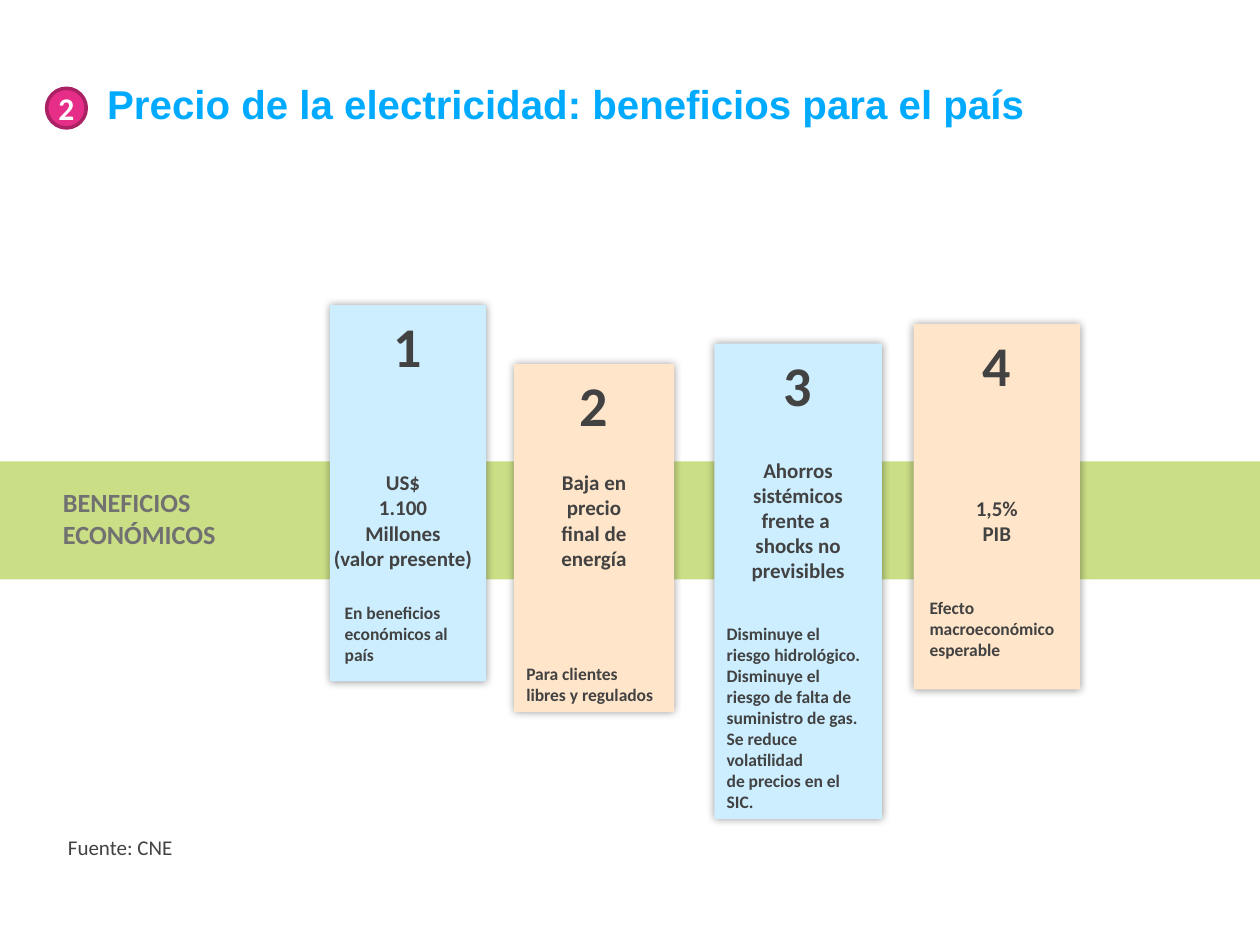
from dataclasses import dataclass

from lxml.etree import SubElement
from pptx import Presentation
from pptx.dml.color import RGBColor
from pptx.enum.shapes import MSO_SHAPE
from pptx.enum.text import MSO_ANCHOR, PP_ALIGN
from pptx.oxml.ns import qn
from pptx.util import Cm, Pt

BLUE, PEACH, GREEN = "CCEEFF", "FFE5C9", "96BE0F"
PINK, DARK_PINK, TITLE_BLUE = "E62D87", "AA2164", "00AAFF"
DARK, GREY, WHITE = "424242", "717171", "FFFFFF"
BAND_TOP, BAND_HEIGHT = 9.3, 2.38
BAND_MIDDLE = BAND_TOP + BAND_HEIGHT / 2
HEADLINE_LINE = 0.51


@dataclass
class Benefit:
    left: float
    top: float
    width: float
    height: float
    color: str
    headline: str
    note: str
    note_top: float
    note_height: float
    headline_shift: float = 0
    note_shift: float = 0


# In the texts, \n starts a paragraph and \v a line within it
BENEFITS = [
    Benefit(6.65, 6.15, 3.15, 7.59, BLUE,
            "US$\n1.100\nMillones\n(valor presente)",
            "En beneficios\veconómicos al país", 12.01, 1.55, -0.1, 0.05),
    Benefit(10.36, 7.34, 3.23, 7.01, PEACH,
            "Baja en\vprecio\vfinal de\venergía",
            "Para clientes\vlibres y regulados", 13.23, 1.12),
    Benefit(14.4, 6.93, 3.38, 9.58, BLUE,
            "Ahorros\vsistémicos\vfrente a \vshocks no\vprevisibles",
            "Disminuye el\vriesgo hidrológico.\vDisminuye el\v"
            "riesgo de falta de\vsuministro de gas.\n"
            "Se reduce volatilidad\vde precios en el SIC.", 12.42, 4.11),
    Benefit(18.42, 6.53, 3.35, 7.37, PEACH,
            "1,5%\vPIB", "Efecto\vmacroeconómico\vesperable",
            11.91, 1.55, 0, 0.07),
]


def rgb(color: str) -> RGBColor:
    return RGBColor.from_string(color)


def write(shape, text: str, size: float, color: str = DARK, font: str = "Calibri",
          bold: bool = True, align=PP_ALIGN.LEFT, anchor=MSO_ANCHOR.TOP,
          margins=(0.25, 0.13, 0.25, 0.13), spacing: float = 1.0) -> None:
    frame = shape.text_frame
    frame.word_wrap = True
    frame.vertical_anchor = anchor
    (frame.margin_left, frame.margin_top,
     frame.margin_right, frame.margin_bottom) = map(Cm, margins)
    frame.text = text
    for paragraph in frame.paragraphs:
        paragraph.alignment = align
        paragraph.line_spacing = spacing
        paragraph.space_before = Pt(0)
        paragraph.font.name = font
        paragraph.font.size = Pt(size)
        paragraph.font.bold = bold
        paragraph.font.color.rgb = rgb(color)


def add_label(slide, left: float, top: float, width: float, height: float,
              text: str, size: float, **text_format) -> None:
    label = slide.shapes.add_textbox(Cm(left), Cm(top), Cm(width), Cm(height))
    write(label, text, size, **text_format)


def add_figure(slide, kind, left: float, top: float, width: float,
               height: float, fill: str):
    figure = slide.shapes.add_shape(kind, Cm(left), Cm(top), Cm(width), Cm(height))
    figure.shadow.inherit = False
    figure.fill.solid()
    figure.fill.fore_color.rgb = rgb(fill)
    figure.line.fill.background()
    return figure


def add_alpha(color_element, percent: int) -> None:
    SubElement(color_element, qn("a:alpha"), val=str(percent * 1000))


def add_shadow(figure) -> None:
    effects = figure.element.spPr.find(qn("a:effectLst"))
    shadow = SubElement(effects, qn("a:outerShdw"), blurRad=str(Pt(5)),
                        dist="0", dir="0", algn="ctr", rotWithShape="0")
    add_alpha(SubElement(shadow, qn("a:srgbClr"), val="000000"), 40)


def add_benefit_card(slide, benefit: Benefit) -> None:
    card = add_figure(slide, MSO_SHAPE.RECTANGLE, benefit.left, benefit.top,
                      benefit.width, benefit.height, benefit.color)
    add_shadow(card)


def add_benefit_texts(slide, number: int, benefit: Benefit) -> None:
    add_label(slide, benefit.left, benefit.top, benefit.width, 1.63,
              str(number), 32, align=PP_ALIGN.CENTER)
    lines = len(benefit.headline.replace("\v", "\n").split("\n"))
    height = lines * HEADLINE_LINE + 0.26
    add_label(slide, benefit.left + benefit.headline_shift,
              BAND_MIDDLE - height / 2, benefit.width, height,
              benefit.headline, 12, align=PP_ALIGN.CENTER,
              margins=(0.1, 0.13, 0.1, 0.13))
    add_label(slide, benefit.left + benefit.note_shift, benefit.note_top,
              benefit.width - benefit.note_shift, benefit.note_height,
              benefit.note, 10)


def main() -> None:
    presentation = Presentation()
    presentation.slide_width, presentation.slide_height = Cm(25.4), Cm(19.05)
    slide = presentation.slides.add_slide(presentation.slide_layouts[5])

    # Title
    title = slide.shapes.title
    title.left, title.top, title.width, title.height = map(
        Cm, (0.91, 0.91, 23.57, 2.49))
    write(title, "Precio de la electricidad: beneficios para el país", 23,
          color=TITLE_BLUE, font="Arial", anchor=MSO_ANCHOR.MIDDLE,
          margins=(1.25, 0, 0, 0), spacing=0.9)

    # Translucent band behind the cards
    band = add_figure(slide, MSO_SHAPE.RECTANGLE, 0, BAND_TOP, 25.4,
                      BAND_HEIGHT, GREEN)
    add_alpha(band.element.spPr.find(qn("a:solidFill"))[0], 50)

    # Benefit cards, then their texts
    for benefit in BENEFITS:
        add_benefit_card(slide, benefit)
    for number, benefit in enumerate(BENEFITS, start=1):
        add_benefit_texts(slide, number, benefit)

    # Band label and source
    add_label(slide, 1.02, 9.68, 4.62, 1.55, "BENEFICIOS\nECONÓMICOS", 15,
              color=GREY)
    add_label(slide, 1.12, 16.69, 19.13, 0.76, "Fuente: CNE", 12, bold=False)

    # Section badge
    badge = add_figure(slide, MSO_SHAPE.OVAL, 0.94, 1.78, 0.8, 0.8, PINK)
    badge.line.color.rgb = rgb(DARK_PINK)
    badge.line.width = Pt(2)
    write(badge, "2", 18, color=WHITE, align=PP_ALIGN.CENTER,
          anchor=MSO_ANCHOR.MIDDLE, margins=(0, 0, 0, 0))

    presentation.save("out.pptx")


if __name__ == "__main__":
    main()
